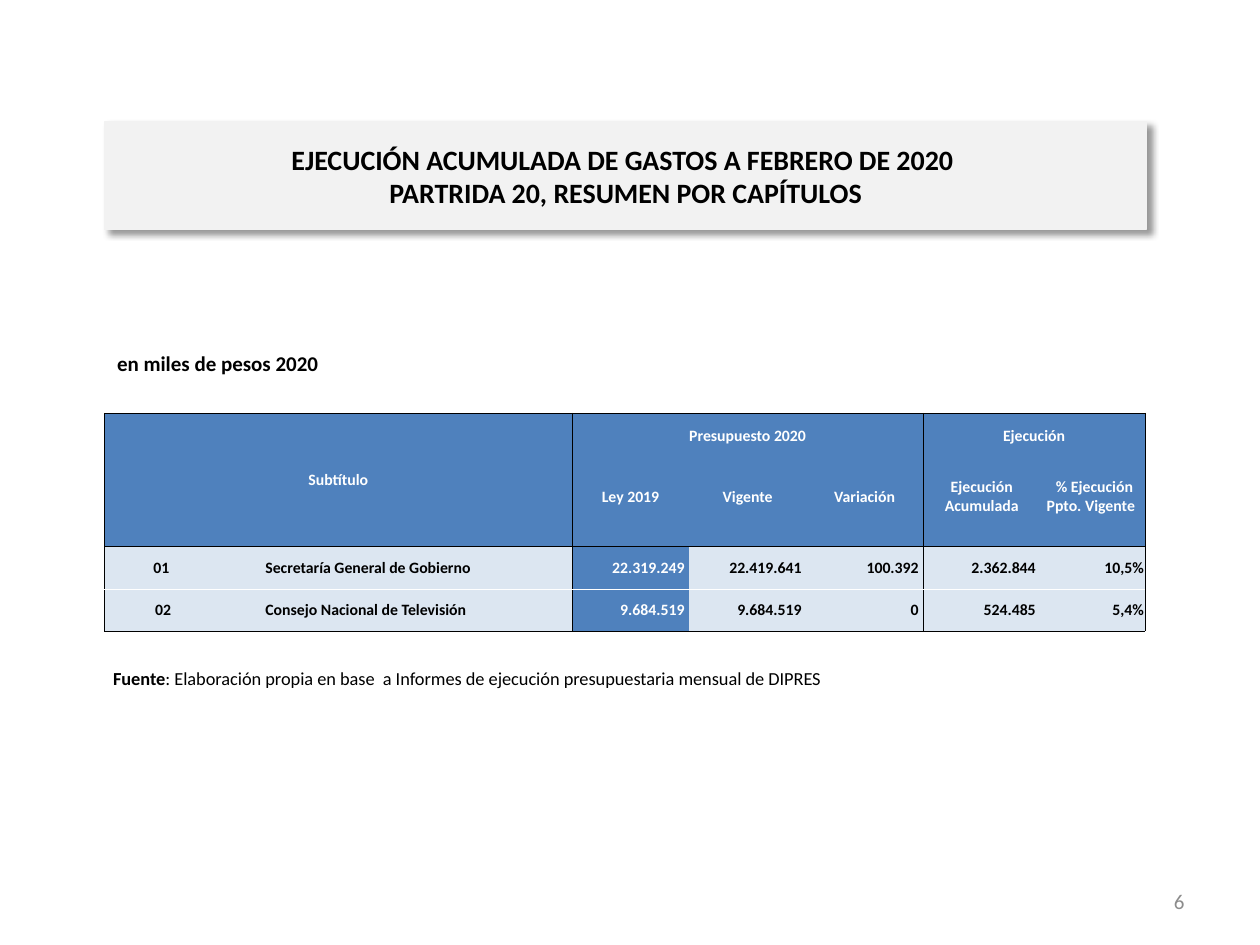
from dataclasses import dataclass
from lxml.etree import SubElement as Sub
from pptx import Presentation
from pptx.dml.color import RGBColor as Rgb
from pptx.enum.text import MSO_ANCHOR as Anchor, MSO_AUTO_SIZE as Fit, PP_ALIGN as Align
from pptx.oxml.ns import qn
from pptx.util import Cm, Pt


@dataclass(frozen=True)
class Theme:
    font: str = "Calibri"
    black: str = "000000"
    white: str = "FFFFFF"
    panel: str = "F2F2F2"
    blue: str = "4F81BD"
    pale: str = "DCE6F1"
    gray: str = "8C8C8C"
    title: float = 16
    label: float = 12
    note: float = 10.5
    cell: float = 9
    rule: float = 0.5


T = Theme()
COLS = [2.36, 0.86, 6.2, 2.36, 2.36, 2.36, 2.36, 2.11]
ROWS = [0.66, 2.03, 0.86, 0.84]
HEADS = [
    ["Subtítulo", "", "", "Presupuesto 2020", "", "", "Ejecución", ""],
    ["", "", "", "Ley 2019", "Vigente", "Variación",
     "Ejecución Acumulada", " % Ejecución Ppto. Vigente "],
]
DATA = [
    ["01 ", "", "Secretaría General de Gobierno", "22.319.249 ",
     "22.419.641 ", "100.392 ", "2.362.844 ", "10,5%"],
    ["02", "", "Consejo Nacional de Televisión", "9.684.519 ",
     "9.684.519 ", "0 ", "524.485 ", "5,4%"],
]
ALIGN = [Align.CENTER, Align.CENTER, Align.JUSTIFY] + [Align.RIGHT] * 5
SPANS = {(0, 0): (2, 3), (0, 3): (1, 3), (0, 6): (1, 2)}
EDGES = {0, 3, 6, 8}
LINES = {0: T.black, 2: T.black, 3: T.white, 4: T.black}


def add_run(para, text, size, color, bold=False):
    run = para.add_run()
    run.text = text
    font = run.font
    font.name, font.size, font.bold = T.font, Pt(size), bold
    font.color.rgb = Rgb.from_string(color)


def paint(fill, color):
    fill.solid()
    fill.fore_color.rgb = Rgb.from_string(color)


def add_shade(shape):
    shape.shadow.inherit = False
    glow = Sub(shape._element.spPr.find(qn("a:effectLst")), qn("a:outerShdw"),
               blurRad=str(Pt(4)), dist=str(Pt(3)), dir="2700000",
               algn="tl", rotWithShape="0")
    tint = Sub(glow, qn("a:srgbClr"), val=T.black)
    Sub(tint, qn("a:alpha"), val="40000")


def add_title(slide, box):
    shape = slide.shapes.title
    shape.left, shape.top, shape.width, shape.height = map(Cm, box)
    paint(shape.fill, T.panel)
    paint(shape.line.fill, T.panel)
    shape.line.width = Pt(0.75)
    add_shade(shape)
    frame = shape.text_frame
    frame.auto_size = Fit.NONE
    frame.vertical_anchor = Anchor.MIDDLE
    para = frame.paragraphs[0]
    para.alignment = Align.CENTER
    add_run(para, "EJECUCIÓN ACUMULADA DE GASTOS A FEBRERO DE 2020 ", T.title, T.black, True)
    para.add_line_break()
    add_run(para, "PARTRIDA 20, RESUMEN POR CAPÍTULOS", T.title, T.black, True)


def add_text(slide, box, runs, size, color, align=Align.LEFT, anchor=Anchor.TOP):
    frame = slide.shapes.add_textbox(*map(Cm, box)).text_frame
    frame.word_wrap = True
    frame.vertical_anchor = anchor
    para = frame.paragraphs[0]
    para.alignment = align
    for text, bold in runs:
        add_run(para, text, size, color, bold)


def add_edge(props, tag, color):
    line = Sub(props, qn(f"a:{tag}"), w=str(Pt(T.rule)))
    if color:
        Sub(Sub(line, qn("a:solidFill")), qn("a:srgbClr"), val=color)
    else:
        Sub(line, qn("a:noFill"))


def rule_cell(cell, row, col):
    tall, wide = SPANS.get((row, col), (1, 1))
    props = cell._tc.get_or_add_tcPr()
    for tag, edge in (("lnL", col), ("lnR", col + wide)):
        add_edge(props, tag, T.black if edge in EDGES else None)
    for tag, edge in (("lnT", row), ("lnB", row + tall)):
        add_edge(props, tag, LINES.get(edge))


def fill_cell(cell, text, row, col):
    head = row < len(HEADS)
    dark = head or col == 3
    rule_cell(cell, row, col)
    paint(cell.fill, T.blue if dark else T.pale)
    cell.margin_left = cell.margin_right = cell.margin_top = Cm(0.02)
    cell.margin_bottom = 0
    top = row == 0 and col > 0
    cell.vertical_anchor = Anchor.BOTTOM if top else Anchor.MIDDLE
    para = cell.text_frame.paragraphs[0]
    para.alignment = Align.CENTER if head else ALIGN[col]
    if text:
        add_run(para, text, T.cell, T.white if dark else T.black, True)
    else:
        para.font.size = Pt(T.cell)


def add_grid(slide, left, top):
    grid = slide.shapes.add_table(len(ROWS), len(COLS), Cm(left), Cm(top),
                                  Cm(sum(COLS)), Cm(sum(ROWS))).table
    grid.first_row = grid.horz_banding = False
    for col, width in zip(grid.columns, COLS):
        col.width = Cm(width)
    for row, height in zip(grid.rows, ROWS):
        row.height = Cm(height)
    for row, texts in enumerate(HEADS + DATA):
        for col, text in enumerate(texts):
            fill_cell(grid.cell(row, col), text, row, col)
    for (row, col), (tall, wide) in SPANS.items():
        grid.cell(row, col).merge(grid.cell(row + tall - 1, col + wide - 1))


def main():
    deck = Presentation()
    deck.slide_width, deck.slide_height = Cm(25.4), Cm(19.05)
    slide = deck.slides.add_slide(deck.slide_layouts[5])
    add_title(slide, (2.11, 2.46, 21.01, 2.16))
    add_text(slide, (18.2, 17.66, 5.93, 1.01), [("6", False)],
             T.label, T.gray, Align.RIGHT, Anchor.MIDDLE)
    add_text(slide, (2.03, 13.33, 20.95, 1.01),
             [("Fuente", True),
              (": Elaboración propia en base  a Informes de ejecución"
               " presupuestaria mensual de DIPRES", False)],
             T.note, T.black)
    add_text(slide, (2.11, 6.94, 20.6, 0.79), [("en miles de pesos 2020", True)],
             T.label, T.black)
    add_grid(slide, 2.11, 8.33)
    deck.save("out.pptx")


if __name__ == "__main__":
    main()
